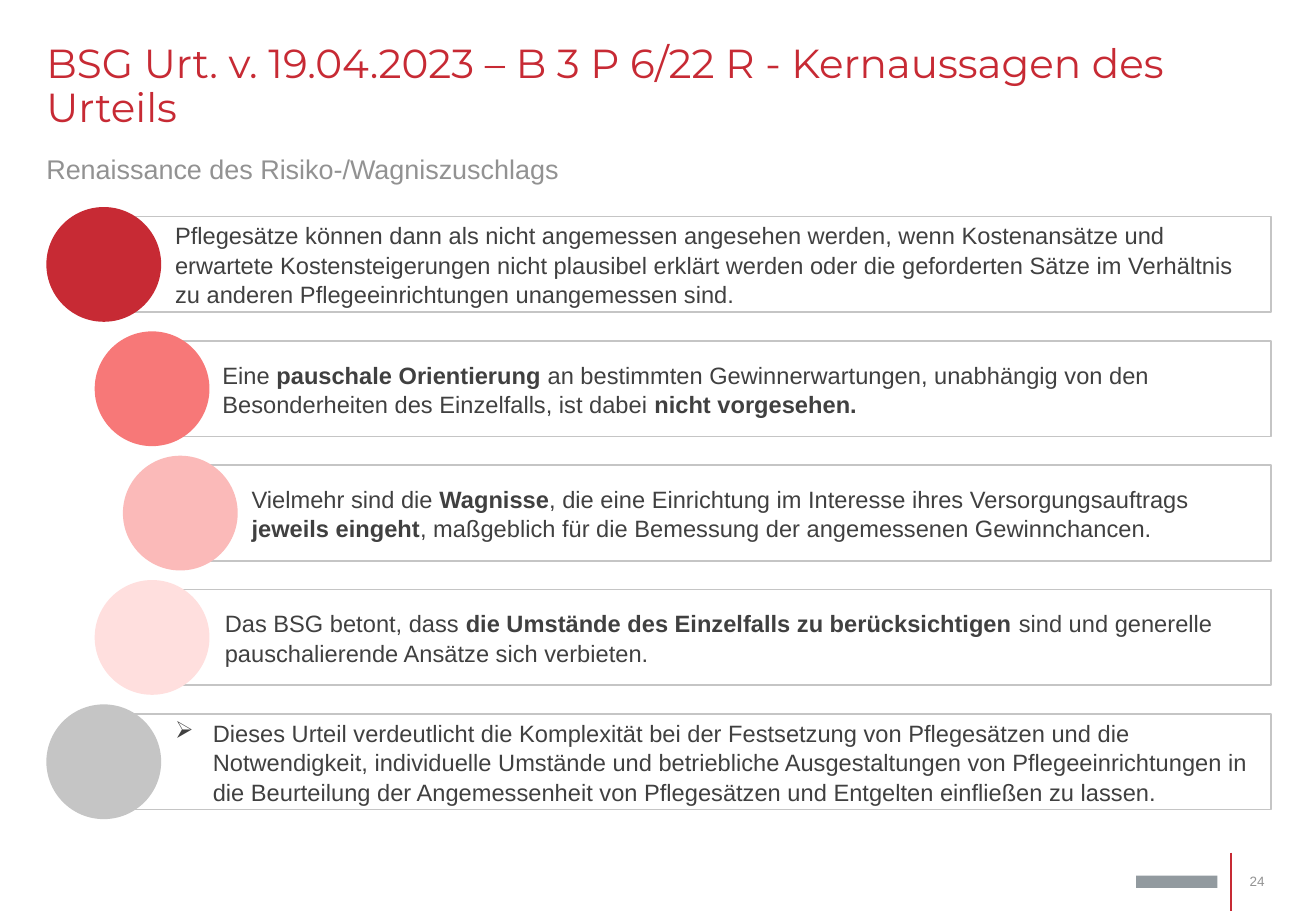
from lxml import etree
from pptx import Presentation
from pptx.dml.color import RGBColor
from pptx.enum.shapes import MSO_CONNECTOR, MSO_SHAPE
from pptx.enum.text import MSO_ANCHOR, MSO_AUTO_SIZE, PP_ALIGN
from pptx.oxml.ns import qn
from pptx.util import Cm, Pt

RECT, OVAL, LINE = MSO_SHAPE.RECTANGLE, MSO_SHAPE.OVAL, MSO_CONNECTOR.STRAIGHT
TOP, MIDDLE = MSO_ANCHOR.TOP, MSO_ANCHOR.MIDDLE
LEFT, RIGHT = PP_ALIGN.LEFT, PP_ALIGN.RIGHT

COLORS = {
    "red": "C72A34", "coral": "F77878", "rose": "FBBAB9", "blush": "FFDFDE",
    "silver": "C5C5C5", "text": "404040", "subtitle": "929292",
    "number": "939393", "white": "FFFFFF", "logo": "929A9F",
}
TITLE = "BSG Urt. v. 19.04.2023 – B 3 P 6/22 R - Kernaussagen des Urteils"
SUBTITLE = "Renaissance des Risiko-/Wagniszuschlags"
PAGE = "24"

# ROWS: circle left, bar left, circle colour, text indent, bullet, (text, bold) runs
ROWS = [
    (0.97, 2.77, "red", 0, None, [
        ("Pflegesätze können dann als nicht angemessen angesehen werden, wenn "
         "Kostenansätze und erwartete Kostensteigerungen nicht plausibel erklärt "
         "werden oder die geforderten Sätze im Verhältnis zu anderen "
         "Pflegeeinrichtungen unangemessen sind.", False)]),
    (1.98, 3.76, "coral", 0, None, [
        ("Eine ", False), ("pauschale Orientierung", True),
        (" an bestimmten Gewinnerwartungen, unabhängig von den Besonderheiten "
         "des Einzelfalls, ist dabei ", False),
        ("nicht vorgesehen.", True)]),
    (2.57, 4.37, "rose", 0, None, [
        ("Vielmehr sind die ", False), ("Wagnisse", True),
        (", die eine Einrichtung im Interesse ihres Versorgungsauftrags ", False),
        ("jeweils eingeht", True),
        (", maßgeblich für die Bemessung der angemessenen Gewinnchancen.", False)]),
    (1.98, 3.56, "blush", 0.25, None, [
        ("Das BSG betont, dass ", False),
        ("die Umstände des Einzelfalls zu berücksichtigen ", True),
        ("sind und generelle pauschalierende Ansätze sich verbieten.", False)]),
    (0.97, 2.77, "silver", 0.79, "➢", [
        ("Dieses Urteil verdeutlicht die Komplexität bei der Festsetzung von "
         "Pflegesätzen und die Notwendigkeit, individuelle Umstände und "
         "betriebliche Ausgestaltungen von Pflegeeinrichtungen in die Beurteilung "
         "der Angemessenheit von Pflegesätzen und Entgelten einfließen zu lassen.",
         False)]),
]
MARGIN, CONTENT_W = 0.97, 25.6
FIRST_CENTER, PITCH = 5.53, 2.6
BAR_H, BAR_RIGHT, CIRCLE = 2.0, 26.57, 2.4


def rgb(name):
    return RGBColor.from_string(COLORS[name])


def write(s, text, size=14, color="text", font="Arial", spacing=1.0, align=LEFT,
          anchor=TOP, insets=(0, 0, 0, 0), indent=0, bullet=None):
    tf = s.text_frame
    tf.word_wrap = True
    tf.auto_size = MSO_AUTO_SIZE.NONE
    tf.vertical_anchor = anchor
    tf.margin_left, tf.margin_top, tf.margin_right, tf.margin_bottom = map(Cm, insets)
    p = tf.paragraphs[0]
    p.alignment, p.line_spacing = align, spacing
    p.space_before = Pt(0)
    pPr = p._p.get_or_add_pPr()
    if indent:
        pPr.set("marL", str(Cm(indent)))
    if bullet:
        pPr.set("indent", str(-Cm(indent)))
        etree.SubElement(pPr, qn("a:buChar"), char=bullet)
    for part, bold in [(text, False)] if isinstance(text, str) else text:
        r = p.add_run()
        r.text = part
        r.font.name, r.font.size, r.font.bold = font, Pt(size), bold
        r.font.color.rgb = rgb(color)


def add_shape(slide, kind, x, y, w, h, fill, line=None):
    s = slide.shapes.add_shape(kind, Cm(x), Cm(y), Cm(w), Cm(h))
    s.shadow.inherit = False
    s.fill.solid()
    s.fill.fore_color.rgb = rgb(fill)
    if line:
        s.line.color.rgb = rgb(line)
        s.line.width = Pt(1)
    else:
        s.line.fill.background()
    return s


def add_text(slide, x, y, w, h, text, **fmt):
    write(slide.shapes.add_textbox(Cm(x), Cm(y), Cm(w), Cm(h)), text, **fmt)


def add_footer(slide):
    line = slide.shapes.add_connector(LINE, Cm(25.73), Cm(17.83), Cm(25.73), Cm(19.05))
    line.line.color.rgb = rgb("red")
    line.line.width = Pt(1)
    etree.SubElement(line._element.spPr, qn("a:effectLst"))
    add_shape(slide, RECT, 23.75, 18.31, 1.7, 0.26, "logo")
    add_text(slide, 25.86, 18.19, 0.58, 0.48, PAGE, size=8, color="number",
             align=RIGHT, anchor=MIDDLE)


def main():
    prs = Presentation()
    prs.slide_width, prs.slide_height = Cm(27.51), Cm(19.05)
    slide = prs.slides.add_slide(prs.slide_layouts[5])

    title = slide.shapes.title
    title.left, title.top = Cm(MARGIN), Cm(0.91)
    title.width, title.height = Cm(CONTENT_W), Cm(1.93)
    write(title, TITLE, size=24, color="red", font="Montserrat", spacing=0.9)
    add_text(slide, MARGIN, 3.12, CONTENT_W, 0.79, SUBTITLE, size=16,
             color="subtitle", spacing=1.1)

    for i, (circle_x, bar_x, color, indent, bullet, runs) in enumerate(ROWS):
        center = FIRST_CENTER + i * PITCH
        bar = add_shape(slide, RECT, bar_x, center - BAR_H / 2,
                        BAR_RIGHT - bar_x, BAR_H, "white", line="silver")
        write(bar, runs, spacing=1.04, anchor=MIDDLE, indent=indent, bullet=bullet,
              insets=(0.89, 0.13, 0.25, 0.13))
        add_shape(slide, OVAL, circle_x, center - CIRCLE / 2, CIRCLE, CIRCLE, color)

    add_footer(slide)
    prs.save("out.pptx")


if __name__ == "__main__":
    main()
